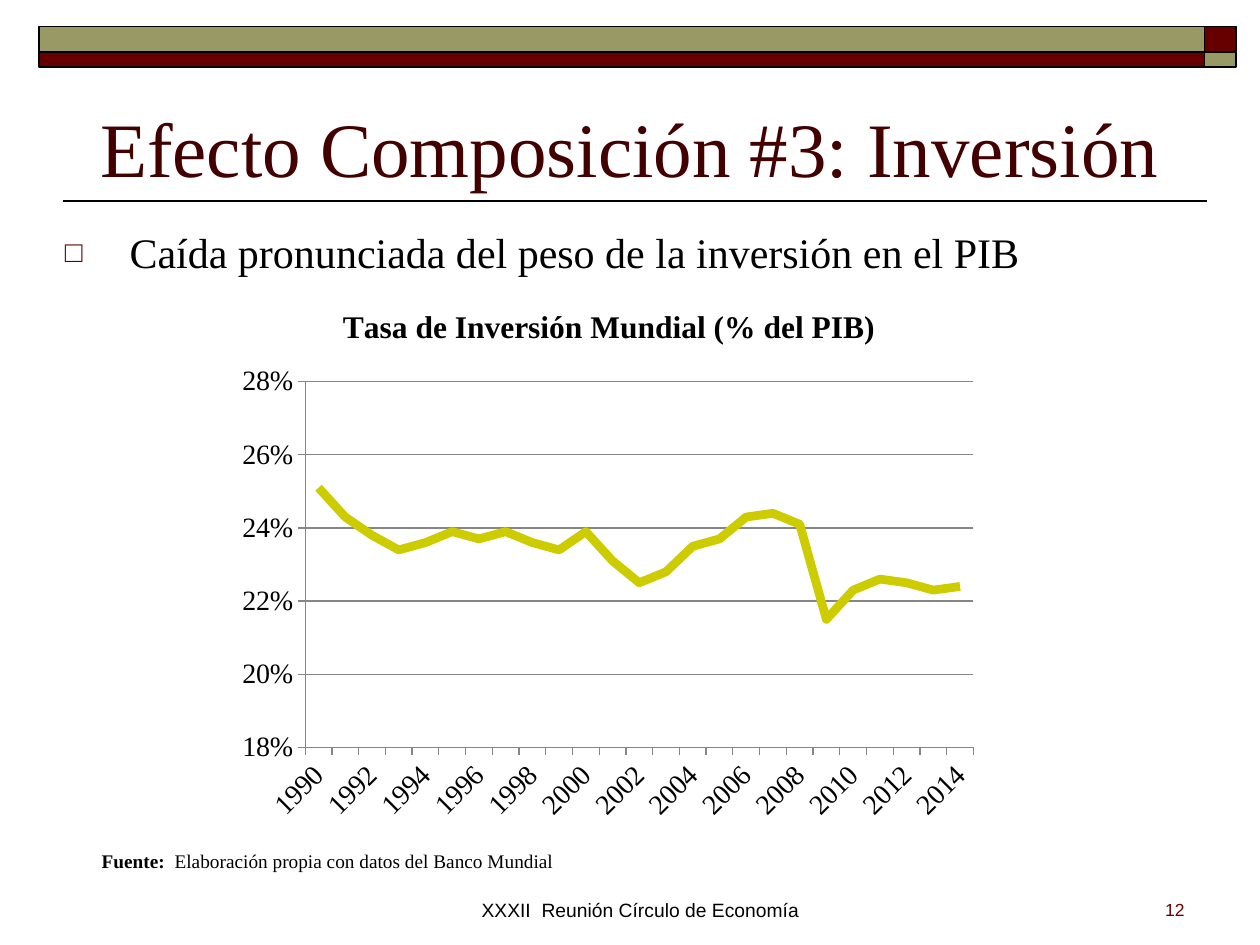
"""Build the slide on the world investment rate with its line chart."""
from dataclasses import dataclass

from lxml.etree import SubElement
from pptx import Presentation
from pptx.chart.data import CategoryChartData
from pptx.dml.color import RGBColor
from pptx.enum.chart import XL_CHART_TYPE, XL_MARKER_STYLE, XL_TICK_MARK
from pptx.enum.shapes import MSO_CONNECTOR, MSO_SHAPE
from pptx.enum.text import MSO_ANCHOR, PP_ALIGN
from pptx.oxml import parse_xml
from pptx.oxml.ns import nsdecls, qn
from pptx.util import Pt

COLORS = {
    "black": "000000",
    "maroon": "660000",
    "title": "420000",
    "olive": "999966",
    "series": "CCCC00",
    "grid": "868686",
}
SERIF, SANS = "Times New Roman", "Arial"
RATES = [
    0.251, 0.243, 0.238, 0.234, 0.236, 0.239, 0.237, 0.239, 0.236, 0.234,
    0.239, 0.231, 0.225, 0.228, 0.235, 0.237, 0.243, 0.244, 0.241, 0.215,
    0.223, 0.226, 0.225, 0.223, 0.224,
]
PLOT = {"x": 0.1, "y": 0.18, "w": 0.88, "h": 0.67}


@dataclass
class Band:
    x: float
    y: float
    w: float
    h: float
    color: str


LEFT, SPLIT, RIGHT = 22.3, 688.3, 706.3
TOP, MIDDLE, BOTTOM = 15.1, 29.5, 38.2
BANDS = [
    Band(SPLIT, TOP, RIGHT - SPLIT, MIDDLE - TOP, "maroon"),
    Band(LEFT, TOP, SPLIT - LEFT, MIDDLE - TOP, "olive"),
    Band(LEFT, MIDDLE, SPLIT - LEFT, BOTTOM - MIDDLE, "maroon"),
    Band(SPLIT, MIDDLE, RIGHT - SPLIT, BOTTOM - MIDDLE, "olive"),
]


def rgb(name: str) -> RGBColor:
    return RGBColor.from_string(COLORS[name])


def set_font(font, size: float, name: str = SERIF, color: str = "black", bold: bool = False) -> None:
    font.size, font.name, font.bold = Pt(size), name, bold
    font.color.rgb = rgb(color)


def set_line(line, color: str, width: float) -> None:
    line.color.rgb = rgb(color)
    line.width = Pt(width)


def add_band(s, band: Band) -> None:
    sp = s.shapes.add_shape(MSO_SHAPE.RECTANGLE, Pt(band.x), Pt(band.y), Pt(band.w), Pt(band.h))
    sp.shadow.inherit = False
    sp.fill.solid()
    sp.fill.fore_color.rgb = rgb(band.color)
    set_line(sp.line, "black", 1)


def add_rule(s, x1: float, x2: float, y: float) -> None:
    cxn = s.shapes.add_connector(MSO_CONNECTOR.STRAIGHT, Pt(x1), Pt(y), Pt(x2), Pt(y))
    set_line(cxn.line, "black", 1)
    SubElement(cxn.element.spPr, qn("a:effectLst"))


def add_text(s, text: str, x: float, y: float, w: float, h: float, *, size: float,
             font: str = SERIF, color: str = "black", lead: str = "",
             align=PP_ALIGN.LEFT, anchor=MSO_ANCHOR.TOP):
    tf = s.shapes.add_textbox(Pt(x), Pt(y), Pt(w), Pt(h)).text_frame
    tf.word_wrap = True
    tf.vertical_anchor = anchor
    p = tf.paragraphs[0]
    p.alignment = align
    for part, bold in ((lead, True), (text, False)):
        if part:
            r = p.add_run()
            r.text = part
            set_font(r.font, size, font, color, bold)
    return p


def add_bullet(p, indent: float) -> None:
    p.space_before = Pt(3)
    pPr = p._p.get_or_add_pPr()
    pPr.set("marL", str(Pt(indent)))
    pPr.set("indent", str(-Pt(indent)))
    color = SubElement(pPr, qn("a:buClr"))
    SubElement(color, qn("a:srgbClr"), val=COLORS["maroon"])
    SubElement(pPr, qn("a:buSzPct"), val="70000")
    SubElement(pPr, qn("a:buFont"), typeface=SANS)
    SubElement(pPr, qn("a:buChar"), char="□")


def place_plot(chart) -> None:
    area = chart._chartSpace.chart.plotArea
    for old in area.findall(qn("c:layout")):
        area.remove(old)
    modes = "".join(f'<c:{k}Mode val="edge"/>' for k in "xy")
    sizes = "".join(f'<c:{k} val="{v}"/>' for k, v in PLOT.items())
    area.insert(0, parse_xml(
        f'<c:layout {nsdecls("c")}><c:manualLayout><c:layoutTarget val="inner"/>'
        f"{modes}{sizes}</c:manualLayout></c:layout>"))


def add_rate_chart(s, x: float, y: float, w: float, h: float) -> None:
    data = CategoryChartData(number_format="0%")
    data.categories = [str(1990 + i) for i in range(len(RATES))]
    data.add_series("Series 1", RATES)
    chart = s.shapes.add_chart(XL_CHART_TYPE.LINE, Pt(x), Pt(y), Pt(w), Pt(h), data).chart
    set_font(chart.font, 10)
    chart.has_legend = False
    chart.has_title = True
    p = chart.chart_title.text_frame.paragraphs[0]
    r = p.add_run()
    r.text = "Tasa de Inversión Mundial (% del PIB)"
    set_font(r.font, 18, bold=True)
    chart.chart_title.include_in_layout = False

    plot = chart.plots[0]
    plot.vary_by_categories = False
    series = plot.series[0]
    series.smooth = False
    series.marker.style = XL_MARKER_STYLE.NONE
    set_line(series.format.line, "series", 5)

    cat, val = chart.category_axis, chart.value_axis
    for axis in (cat, val):
        axis.major_tick_mark = XL_TICK_MARK.OUTSIDE
        axis.minor_tick_mark = XL_TICK_MARK.NONE
        set_font(axis.tick_labels.font, 16)
        set_line(axis.format.line, "grid", 0.75)
    cat.has_major_gridlines = False
    cat._element.find(qn("c:txPr")).find(qn("a:bodyPr")).set("rot", "-2700000")
    skip = parse_xml(f'<c:tickLblSkip {nsdecls("c")} val="2"/>')
    cat._element.find(qn("c:noMultiLvlLbl")).addprevious(skip)
    val.minimum_scale, val.maximum_scale, val.major_unit = 0.18, 0.28, 0.02
    val.has_major_gridlines = True
    set_line(val.major_gridlines.format.line, "grid", 0.75)
    val.tick_labels.number_format = "0%"
    val.tick_labels.number_format_is_linked = False
    place_plot(chart)


def main() -> None:
    prs = Presentation()
    prs.slide_width, prs.slide_height = Pt(720), Pt(540)
    s = prs.slides.add_slide(prs.slide_layouts[6])
    add_rule(s, 36, 690, 115)
    for band in BANDS:
        add_band(s, band)
    add_text(s, "12", 534, 510, 150, 18, size=10, font=SANS, color="maroon", align=PP_ALIGN.RIGHT)
    add_text(s, "Efecto Composición #3: Inversión", 36, 60, 648, 54, size=44,
             color="title", align=PP_ALIGN.CENTER, anchor=MSO_ANCHOR.BOTTOM)
    p = add_text(s, "Caída pronunciada del peso de la inversión en el PIB", 30, 126, 672, 356, size=24)
    add_bullet(p, 37)
    add_text(s, "XXXII  Reunión Círculo de Economía", 264, 510, 204, 21, size=11,
             font=SANS, align=PP_ALIGN.CENTER)
    add_rate_chart(s, 131, 162, 434, 312)
    add_text(s, "Elaboración propia con datos del Banco Mundial", 51, 482, 290, 21,
             size=11, lead="Fuente:  ")
    prs.save("out.pptx")


if __name__ == "__main__":
    main()
